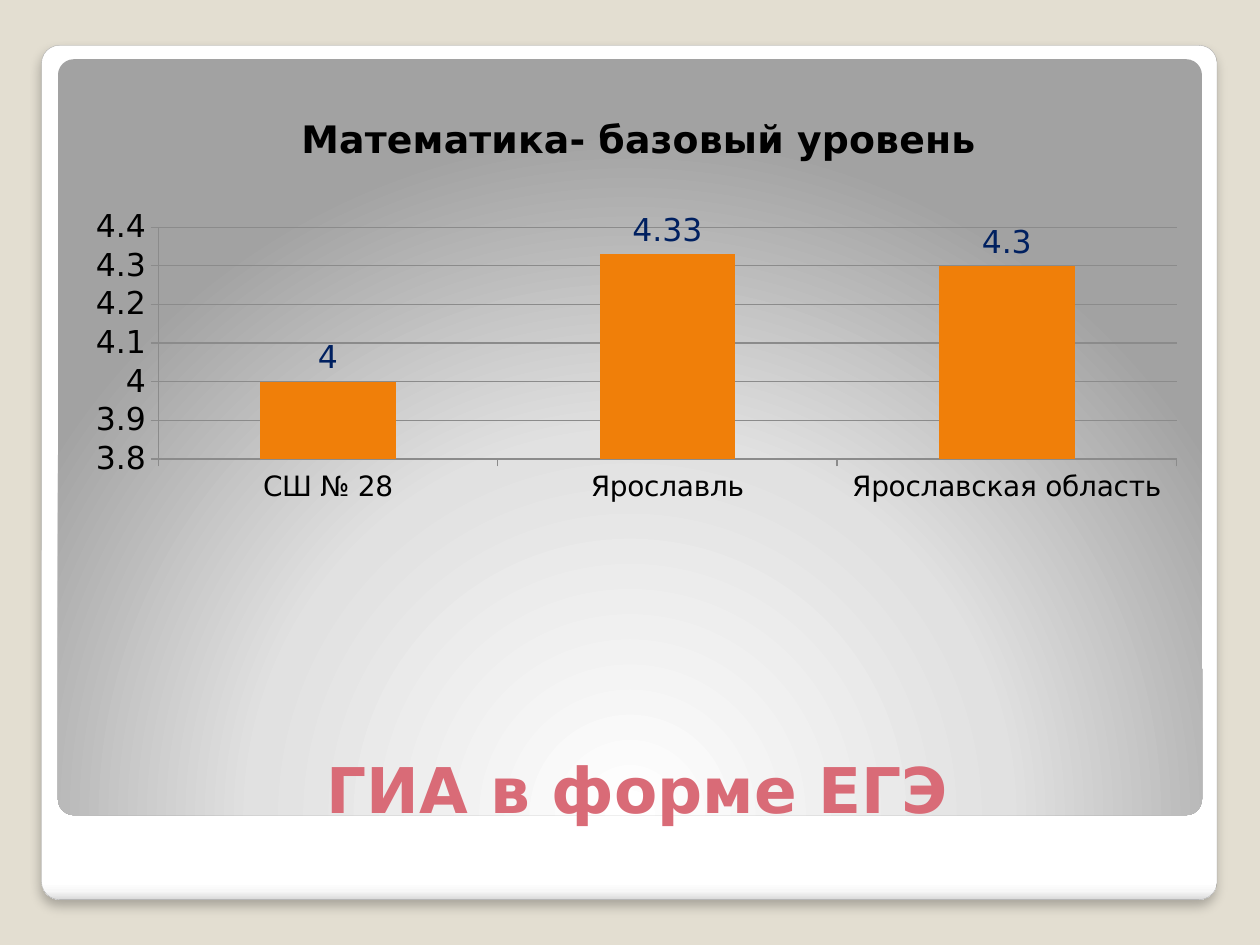
from dataclasses import dataclass

from lxml import etree
from pptx import Presentation, util as u
from pptx.chart.data import CategoryChartData
from pptx.dml.color import RGBColor
from pptx.enum import chart as ch, shapes, text
from pptx.oxml import parse_xml
from pptx.oxml.ns import nsdecls, qn


@dataclass(frozen=True)
class Theme:
    """Colours, font and type sizes of the slide."""
    font: str = "DejaVu Sans"
    back: str = "E3DED1"
    frame: str = "A4A4A4"
    ink: str = "000000"
    grid: str = "8B8B8B"
    heading: str = "D96B77"
    bar: str = "F07F09"
    label: str = "002060"
    heading_size: float = 36
    title_size: float = 21.6
    value_size: float = 18
    category_size: float = 16
    card: tuple = ((0, "FFFFFF"), (98, "FFFFFF"), (99, "F7F7F7"), (100, "DADADA"))
    panel: tuple = ((0, "FFFFFF"), (55, "E1E1E1"), (100, "A2A2A2"))


def format_font(font, name, size, color, bold=False):
    """Apply one text format to a font."""
    font.name, font.size, font.bold = name, u.Pt(size), bold
    font.color.rgb = RGBColor.from_string(color)


def add_text(p, content, **fmt):
    """Add a formatted run to a paragraph."""
    r = p.add_run()
    r.text = content
    format_font(r.font, **fmt)


def set_layout(parent, **values):
    """Place a chart part by fractions of the chart area."""
    old = parent.find(qn("c:layout"))
    index = 0 if old is None else parent.index(old)
    if old is not None:
        parent.remove(old)
    layout = etree.Element(qn("c:layout"))
    manual = etree.SubElement(layout, qn("c:manualLayout"))
    for tag, value in values.items():
        etree.SubElement(manual, qn(f"c:{tag}")).set("val", str(value))
    parent.insert(index, layout)


class Deck:
    """Hold the theme and the current slide."""

    def __init__(self, theme):
        """Start a presentation with one blank slide."""
        self.theme = theme
        self.prs = Presentation()
        self.prs.slide_width, self.prs.slide_height = u.Inches(10), u.Inches(7.5)
        self.s = self.prs.slides.add_slide(self.prs.slide_layouts[6])
        fill = self.s.background.fill
        fill.solid()
        fill.fore_color.rgb = RGBColor.from_string(theme.back)

    def card(self, box, stops, direction, line=None, shadow=False):
        """Add a rounded card with a gradient fill."""
        sp = self.s.shapes.add_shape(
            shapes.MSO_SHAPE.ROUNDED_RECTANGLE, *map(u.Inches, box))
        sp.adjustments[0] = 0.021
        sp.shadow.inherit = False
        colors = "".join(
            f'<a:gs pos="{pos * 1000}"><a:srgbClr val="{color}"/></a:gs>'
            for pos, color in stops)
        grad = parse_xml(f'<a:gradFill {nsdecls("a")} rotWithShape="1">'
                         f'<a:gsLst>{colors}</a:gsLst>{direction}</a:gradFill>')
        sp._element.spPr.find(qn("a:prstGeom")).addnext(grad)
        if line:
            sp.line.color.rgb = RGBColor.from_string(line)
            sp.line.width = u.Pt(0.16)
        else:
            sp.line.fill.background()
        if shadow:
            sp._element.spPr.find(qn("a:effectLst")).append(parse_xml(
                f'<a:outerShdw {nsdecls("a")} blurRad="{u.Pt(6)}" dist="{u.Pt(4)}" '
                f'dir="5400000" algn="t" rotWithShape="0"><a:srgbClr val="{self.theme.ink}">'
                '<a:alpha val="25000"/></a:srgbClr></a:outerShdw>'))

    def heading(self, box, content):
        """Add the bottom-anchored slide heading."""
        t = self.theme
        tf = self.s.shapes.add_textbox(*map(u.Inches, box)).text_frame
        tf.word_wrap = True
        tf.vertical_anchor = text.MSO_ANCHOR.BOTTOM
        tf.margin_bottom = u.Inches(0.02)
        p = tf.paragraphs[0]
        p.alignment = text.PP_ALIGN.CENTER
        add_text(p, content, name=t.font, size=t.heading_size, color=t.heading, bold=True)

    def columns(self, box, title, values):
        """Add a titled column chart with value labels."""
        t = self.theme
        data = CategoryChartData()
        data.categories = list(values)
        data.add_series("Series 1", list(values.values()))
        chart = self.s.shapes.add_chart(
            ch.XL_CHART_TYPE.COLUMN_CLUSTERED, *map(u.Inches, box), data).chart
        format_font(chart.font, t.font, t.value_size, t.ink)
        chart.has_legend = False
        add_text(chart.chart_title.text_frame.paragraphs[0], title,
                 name=t.font, size=t.title_size, color=t.ink, bold=True)
        set_layout(chart.chart_title._element, xMode="edge", yMode="edge", x=0.2, y=0.05)
        set_layout(chart._chartSpace.chart.plotArea, layoutTarget="inner",
                   xMode="edge", yMode="edge", x=0.079, y=0.231, w=0.904, h=0.347)

        axis = chart.value_axis
        axis.minimum_scale, axis.maximum_scale, axis.major_unit = 3.8, 4.4, 0.1
        axis.has_major_gridlines = True
        for side, size in ((axis, t.value_size), (chart.category_axis, t.category_size)):
            side.major_tick_mark = ch.XL_TICK_MARK.OUTSIDE
            format_font(side.tick_labels.font, t.font, size, t.ink)
        for line in (axis.format.line, axis.major_gridlines.format.line,
                     chart.category_axis.format.line):
            line.color.rgb = RGBColor.from_string(t.grid)
            line.width = u.Pt(0.75)

        plot = chart.plots[0]
        plot.gap_width = 150
        plot.vary_by_categories = False
        fill = plot.series[0].format.fill
        fill.solid()
        fill.fore_color.rgb = RGBColor.from_string(t.bar)
        plot.has_data_labels = True
        labels = plot.data_labels
        labels.show_value = True
        labels.position = ch.XL_LABEL_POSITION.OUTSIDE_END
        format_font(labels.font, t.font, t.value_size, t.label)


def main():
    """Build and save the slide."""
    theme = Theme()
    deck = Deck(theme)
    deck.card((0.33, 0.36, 9.33, 6.78), theme.card, '<a:lin ang="5400000" scaled="0"/>',
              line=theme.frame, shadow=True)
    deck.card((0.46, 0.47, 9.08, 6), theme.panel,
              '<a:path path="circle"><a:fillToRect l="50000" t="175000" '
              'r="50000" b="-75000"/></a:path>')
    deck.heading((0.55, 5.64, 9.02, 0.94), "ГИА в форме ЕГЭ")
    deck.columns((0.55, 0.58, 8.94, 5.3), "Математика- базовый уровень",
                 {"СШ № 28": 4, "Ярославль": 4.33, "Ярославская область": 4.3})
    deck.prs.save("out.pptx")


if __name__ == "__main__":
    main()
